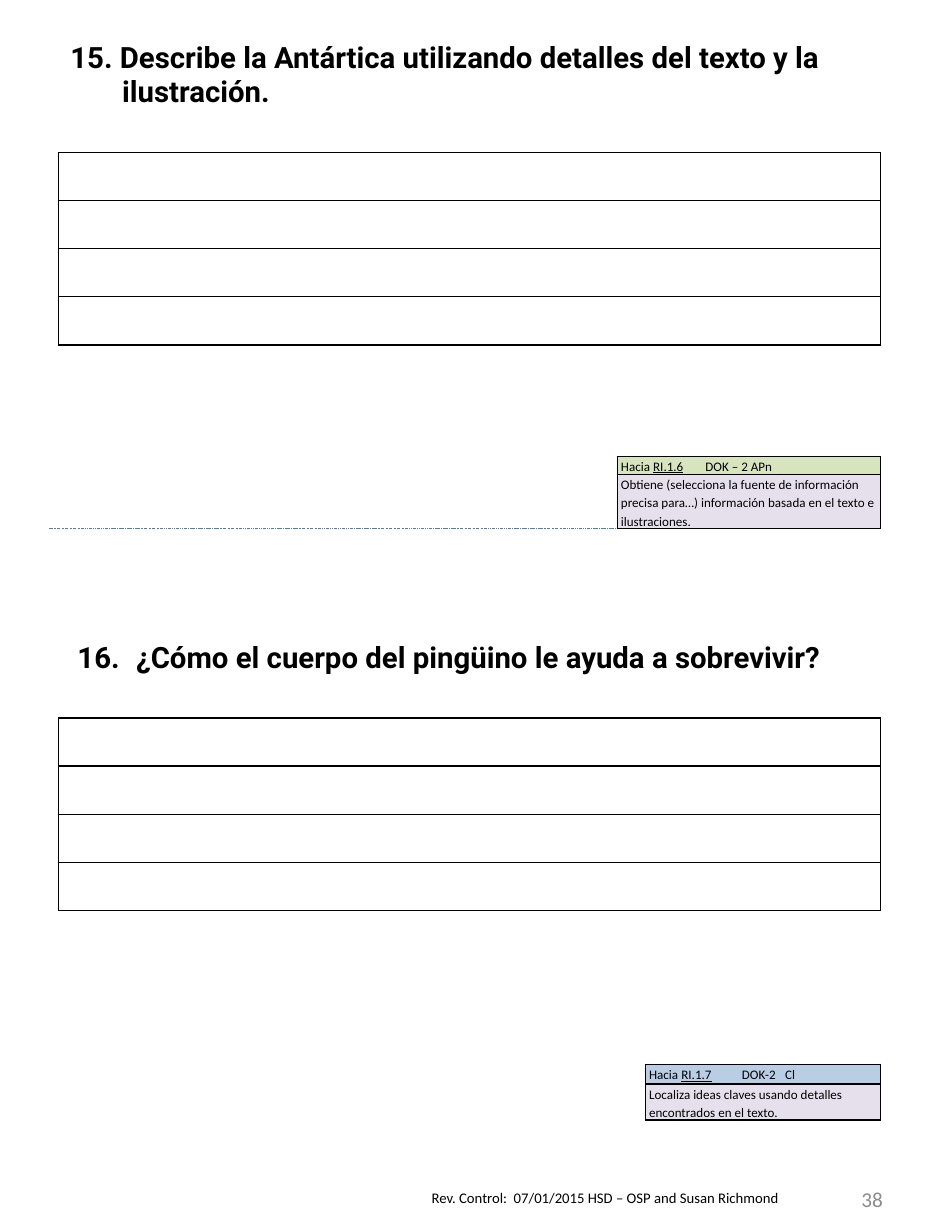
from pptx import Presentation
from pptx.util import Inches, Pt
from pptx.dml.color import RGBColor
from pptx.enum.dml import MSO_LINE
from pptx.enum.shapes import MSO_CONNECTOR
from pptx.enum.text import MSO_ANCHOR, PP_ALIGN
from lxml.etree import SubElement
from pptx.oxml.ns import qn

BLACK = RGBColor(0, 0, 0)
GRAY = RGBColor(0x8C, 0x8C, 0x8C)
BLUE = RGBColor(0x4B, 0x7E, 0xBC)
GREEN = RGBColor(0xD7, 0xE4, 0xBD)
SKY = RGBColor(0xB9, 0xCD, 0xE5)
LILAC = RGBColor(0xE6, 0xE0, 0xEC)

TITLE = dict(name="Roboto", size=Pt(18), bold=True)
SMALL = dict(name="Calibri", size=Pt(8))
FOOT = dict(name="Calibri", size=Pt(9))
PAGE = dict(name="Calibri", size=Pt(13))

TASKS = [
    ("15. Describe la Antártica utilizando detalles del texto y la ilustración.",
     0.3, 1.0, 0.44, -0.44),
    ("16.\t¿Cómo el cuerpo del pingüino le ayuda a sobrevivir?",
     5.42, 0.7, 0.56, -0.5),
]
NOTES = [
    ("RI.1.6", "\tDOK – 2 APn", [0.72],
     "Obtiene (selecciona la fuente de información precisa para…) "
     "información basada en el texto e ilustraciones.",
     GREEN, 3.89, 2.24, [0.15, 0.46]),
    ("RI.1.7", "\tDOK-2\tCl", [0.79, 1.16],
     "Localiza ideas claves usando detalles encontrados en el texto.",
     SKY, 9.07, 2, [0.17, 0.3]),
]
LABELS = [
    ("Rev. Control:  07/01/2015 HSD – OSP and Susan Richmond",
     (3.58, 10.08, 4, 0.25), FOOT, BLACK, PP_ALIGN.LEFT, MSO_ANCHOR.TOP),
    ("38", (6.75, 9.94, 0.87, 0.56), PAGE, GRAY, PP_ALIGN.RIGHT, MSO_ANCHOR.MIDDLE),
]
RIGHT, LINES, STEP = 7.5, 4, 0.41
SIDES = ("L", "R", "T", "B")


def put(item, vals):
    for key, val in vals.items():
        setattr(item, key, val)


def write(para, text, font, color=BLACK, **more):
    run = para.add_run()
    run.text = text
    put(run.font, {**font, **more})
    run.font.color.rgb = color


def edge(cell, shown):
    props = cell._tc.get_or_add_tcPr()
    for side in SIDES:
        line = SubElement(props, qn("a:ln" + side), w=str(Pt(1)))
        if side in shown:
            fill = SubElement(line, qn("a:solidFill"))
            SubElement(fill, qn("a:srgbClr"), val=str(BLACK))
        else:
            SubElement(line, qn("a:noFill"))


def grid(slide, top, width, rows):
    frame = slide.shapes.add_table(
        len(rows), 1, Inches(RIGHT - width), Inches(top),
        Inches(width), Inches(sum(rows)))
    table = frame.table
    put(table, dict(first_row=False, horz_banding=False))
    for row, high in zip(table.rows, rows):
        row.height = Inches(high)
    return [table.cell(i, 0) for i in range(len(rows))]


def task(slide, text, top, head, left, hang):
    cells = grid(slide, top, 7, [head] + [STEP] * LINES)
    for i, cell in enumerate(cells):
        edge(cell, SIDES if i else "B")
        cell.fill.background()
    para = cells[0].text_frame.paragraphs[0]
    props = para._p.get_or_add_pPr()
    props.set("marL", str(Inches(left)))
    props.set("indent", str(Inches(hang)))
    write(para, text, TITLE)


def note(slide, code, level, stops, text, color, top, width, rows):
    cells = grid(slide, top, width, rows)
    pad = dict(margin_left=Inches(0.03), margin_right=Inches(0.03),
               margin_top=0, margin_bottom=0)
    for cell, fill in zip(cells, (color, LILAC)):
        edge(cell, SIDES)
        put(cell, pad)
        cell.fill.solid()
        cell.fill.fore_color.rgb = fill
        cell.text_frame.paragraphs[0].line_spacing = 1.15
    cells[0].vertical_anchor = MSO_ANCHOR.MIDDLE
    head, body = [cell.text_frame.paragraphs[0] for cell in cells]
    tabs = SubElement(head._p.get_or_add_pPr(), qn("a:tabLst"))
    for stop in stops:
        SubElement(tabs, qn("a:tab"), pos=str(Inches(stop)), algn="l")
    write(head, "Hacia ", SMALL)
    write(head, code, SMALL, underline=True)
    write(head, level, SMALL)
    write(body, text, SMALL)


def label(slide, text, place, font, color, align, anchor):
    frame = slide.shapes.add_textbox(*map(Inches, place)).text_frame
    put(frame, dict(word_wrap=True, vertical_anchor=anchor))
    para = frame.paragraphs[0]
    para.alignment = align
    write(para, text, font, color)


def rule(slide):
    line = slide.shapes.add_connector(
        MSO_CONNECTOR.STRAIGHT, *map(Inches, (0.42, 4.5, 7.33, 4.5)))
    put(line.line, dict(width=Pt(0.25), dash_style=MSO_LINE.DASH_DOT_DOT))
    line.line.color.rgb = BLUE
    SubElement(line._element.spPr, qn("a:effectLst"))


def main():
    deck = Presentation()
    put(deck, dict(slide_width=Inches(8), slide_height=Inches(10.5)))
    slide = deck.slides.add_slide(deck.slide_layouts[6])
    rule(slide)
    for item in LABELS:
        label(slide, *item)
    for first, second in zip(TASKS, NOTES):
        task(slide, *first)
        note(slide, *second)
    deck.save("out.pptx")


if __name__ == "__main__":
    main()
